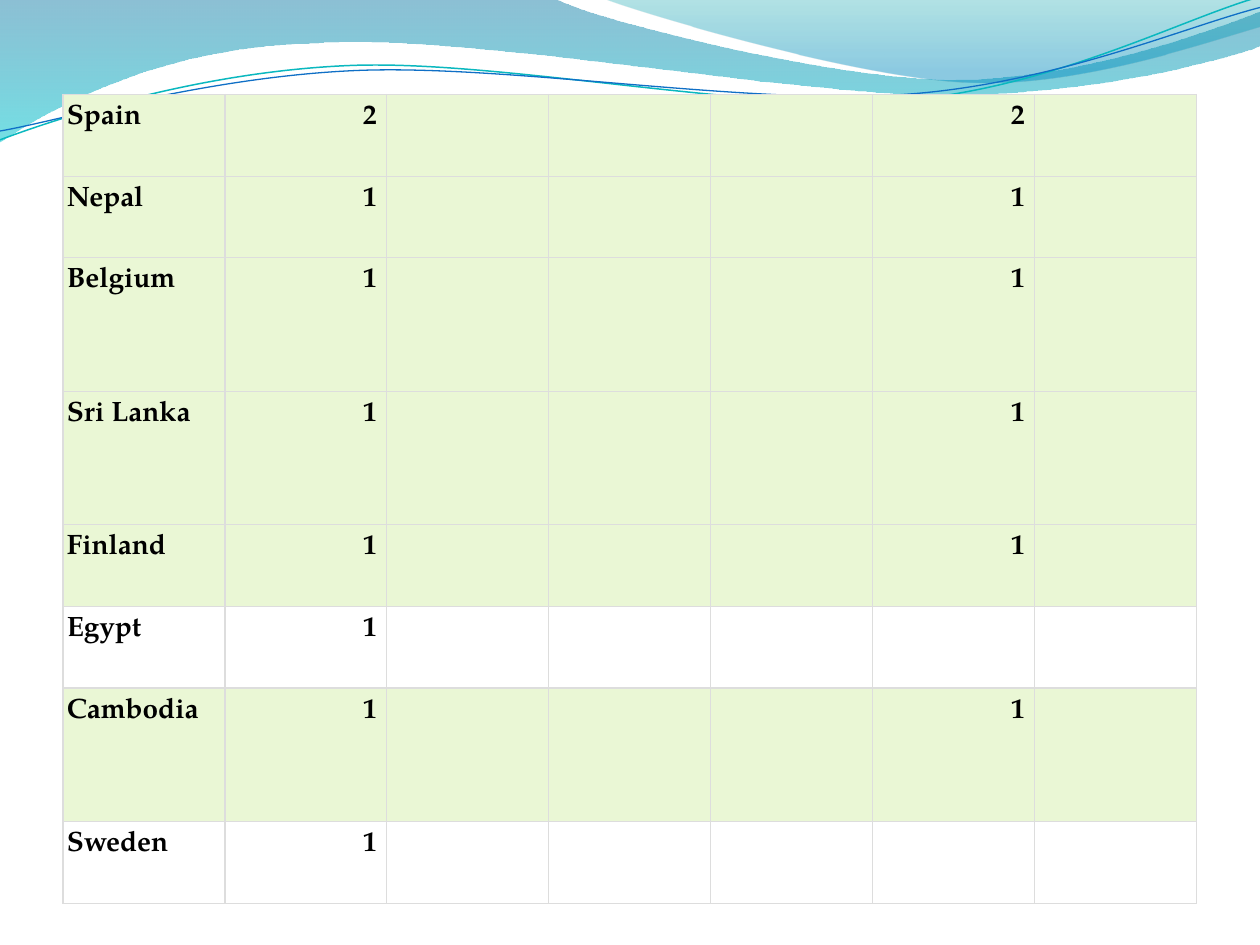
"""Build a slide with a country count table under a wave header."""
import math

from lxml import etree
from pptx import Presentation
from pptx.dml.color import RGBColor
from pptx.enum.text import MSO_ANCHOR, PP_ALIGN
from pptx.oxml.ns import qn
from pptx.util import Inches, Pt

RIGHT = PP_ALIGN.RIGHT
LEFT = PP_ALIGN.LEFT
TOP = MSO_ANCHOR.TOP
FONT = "TeX Gyre Pagella"
COLORS = {
    "text": "000000", "row": "EAF7D5", "border": "DDDDDD",
    "deep_blue": "0074A1", "aqua": "00C6CF", "teal": "00A1A9",
    "sky": "008BBF", "teal_line": "0AB8BF", "blue_line": "0F6FC6",
}


def color(name):
    return RGBColor.from_string(COLORS[name])


def add_curve(page, start, segments, closed, center=(0, 0), tilt=0):
    points = [start]
    for segment in segments:
        points += zip(segment[::2], segment[1::2])
    cos, sin = math.cos(math.radians(tilt)), math.sin(math.radians(tilt))
    cx, cy = center
    spots = [(Inches(cx + (x - cx) * cos - (y - cy) * sin),
              Inches(cy + (x - cx) * sin + (y - cy) * cos)) for x, y in points]
    builder = page.shapes.build_freeform(*spots[0])
    builder.add_line_segments(spots[1:], close=closed)
    shape = builder.convert_to_shape()
    shape.rotation = -tilt
    shape.shadow.inherit = False
    steps = iter(list(shape.element.iter(qn("a:lnTo"))))
    for segment in segments:
        step = next(steps)
        if len(segment) == 6:
            curve = etree.Element(qn("a:cubicBezTo"))
            step.addprevious(curve)
            for corner in (step, next(steps), next(steps)):
                curve.append(corner[0])
                corner.getparent().remove(corner)
    return shape


deck = Presentation()
deck.slide_width = Inches(10)
deck.slide_height = Inches(7.5)
page = deck.slides.add_slide(deck.slide_layouts[6])

waves = [
    ((0, 0),
     [(4.4, -0.01), (4.76, 0.17, 6.64, 0.63, 7.58, 0.63),
      (8.53, 0.63, 9.58, 0.26, 10, 0.09), (10.01, 0.36),
      (9.83, 0.44, 8.7, 0.76, 7.46, 0.75), (6.22, 0.75, 3.82, 0.28, 2.57, 0.34),
      (1.29, 0.36, 0.46, 0.83, -0.01, 1.13), (0, 0)],
     [(0, "deep_blue", 45), (1, "aqua", 55)]),
    ((4.79, -0.01),
     [(5.09, 0.11, 6.82, 0.62, 7.69, 0.65), (8.56, 0.69, 9.61, 0.32, 10, 0.21),
      (10, 0), (4.79, -0.01)],
     [(0, "teal", 30), (0.8, "sky", 45)]),
]
for start, segments, stops in waves:
    wave = add_curve(page, start, segments, True)
    wave.line.fill.background()
    wave.fill.gradient()
    wave.fill.gradient_angle = 270
    for stop, (position, name, opacity) in zip(wave.fill.gradient_stops, stops):
        stop.position = position
        stop.color.rgb = color(name)
    for tint, (position, name, opacity) in zip(wave.element.iter(qn("a:srgbClr")), stops):
        etree.SubElement(tint, qn("a:alpha"), val=str(opacity * 1000))

strands = [
    ((0, 1.11),
     [(0.48, 0.93, 1.58, 0.57, 2.77, 0.52), (3.95, 0.47, 5.93, 0.89, 7.13, 0.8),
      (8.33, 0.71, 9.38, 0.15, 9.98, -0.02)], (4.99, 0.58), "teal_line", 0.85),
    ((0, 1.04),
     [(0.47, 0.96, 1.64, 0.61, 2.83, 0.56), (4.03, 0.51, 5.97, 0.84, 7.17, 0.75),
      (8.36, 0.67, 9.41, 0.21, 10, 0.06)], (5, 0.59), "blue_line", 0.75),
]
for start, segments, center, name, width in strands:
    strand = add_curve(page, start, segments, False, center, 2.7)
    strand.fill.background()
    strand.line.color.rgb = color(name)
    strand.line.width = Pt(width)

COLUMNS = 7
TABLE_HEIGHT = 6.42
TALL = 1.06
SHORT = (TABLE_HEIGHT - 3 * TALL) / 5
countries = [
    ("Spain", "2", "2", SHORT), ("Nepal", "1", "1", SHORT),
    ("Belgium", "1", "1", TALL), ("Sri Lanka", "1", "1", TALL),
    ("Finland", "1", "1", SHORT), ("Egypt", "1", "", SHORT),
    ("Cambodia", "1", "1", TALL), ("Sweden", "1", "", SHORT),
]
frame = page.shapes.add_table(len(countries), COLUMNS, Inches(0.5), Inches(0.75),
                              Inches(9), Inches(TABLE_HEIGHT))
table = frame.table
table.first_row = False
table.horz_banding = False
for column in table.columns:
    column.width = Inches(9 / COLUMNS)

for row_index, (country, total, count, height) in enumerate(countries):
    table.rows[row_index].height = Inches(height)
    values = [country, total, "", "", "", count, ""]
    for column_index, value in enumerate(values):
        cell = table.cell(row_index, column_index)
        cell.margin_left = Inches(0.08 if column_index else 0.03)
        cell.margin_right = cell.margin_top = cell.margin_bottom = Inches(0.08)
        cell.vertical_anchor = TOP
        properties = cell._tc.get_or_add_tcPr()
        for side in ("a:lnL", "a:lnR", "a:lnT", "a:lnB"):
            border = etree.SubElement(properties, qn(side), w=str(Pt(0.75)))
            paint = etree.SubElement(border, qn("a:solidFill"))
            etree.SubElement(paint, qn("a:srgbClr"), val=COLORS["border"])
        if count:
            cell.fill.solid()
            cell.fill.fore_color.rgb = color("row")
        else:
            cell.fill.background()
        if value:
            para = cell.text_frame.paragraphs[0]
            para.alignment = RIGHT if column_index else LEFT
            span = para.add_run()
            span.text = value
            span.font.name = FONT
            span.font.size = Pt(16)
            span.font.bold = True
            span.font.color.rgb = color("text")

deck.save("out.pptx")
